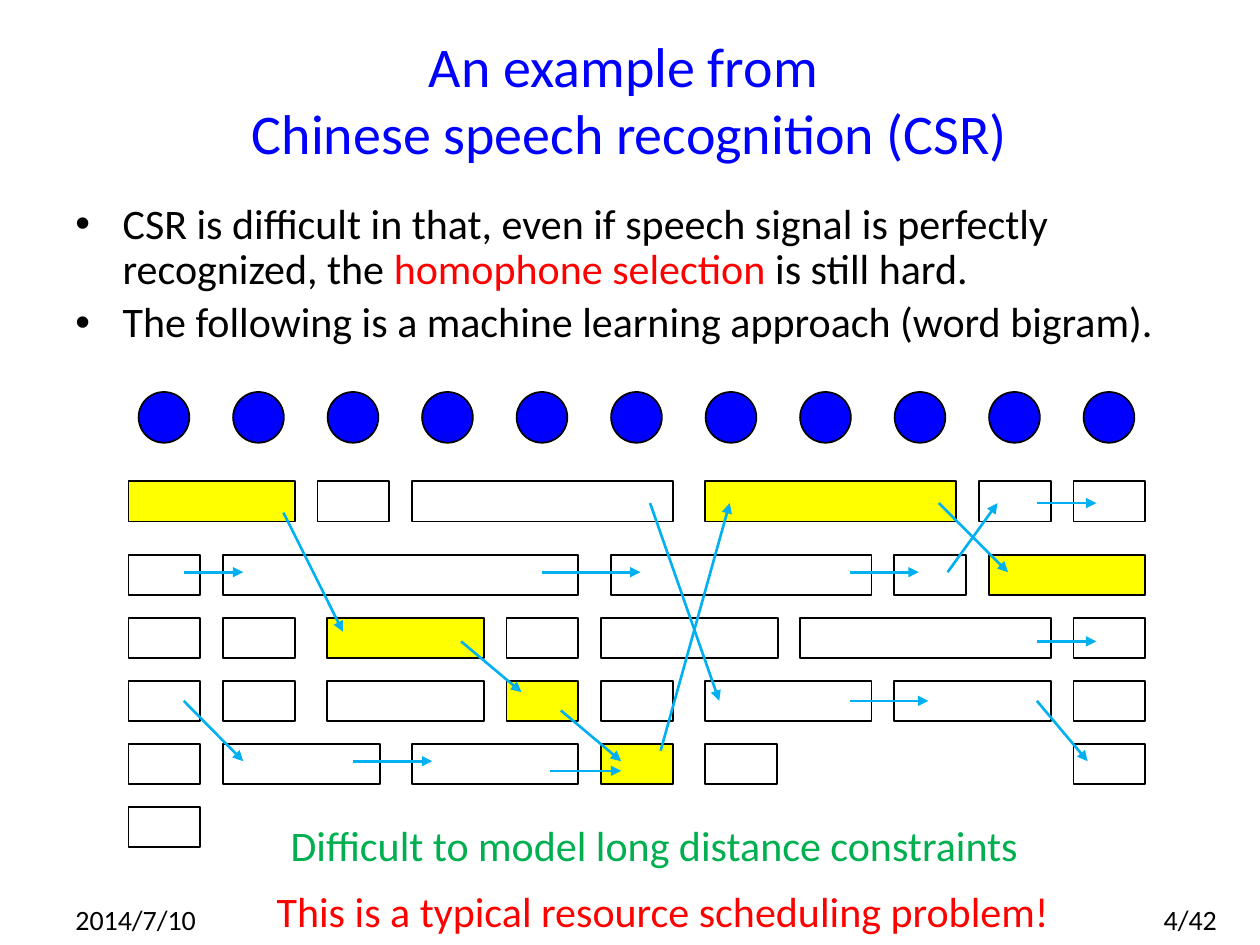
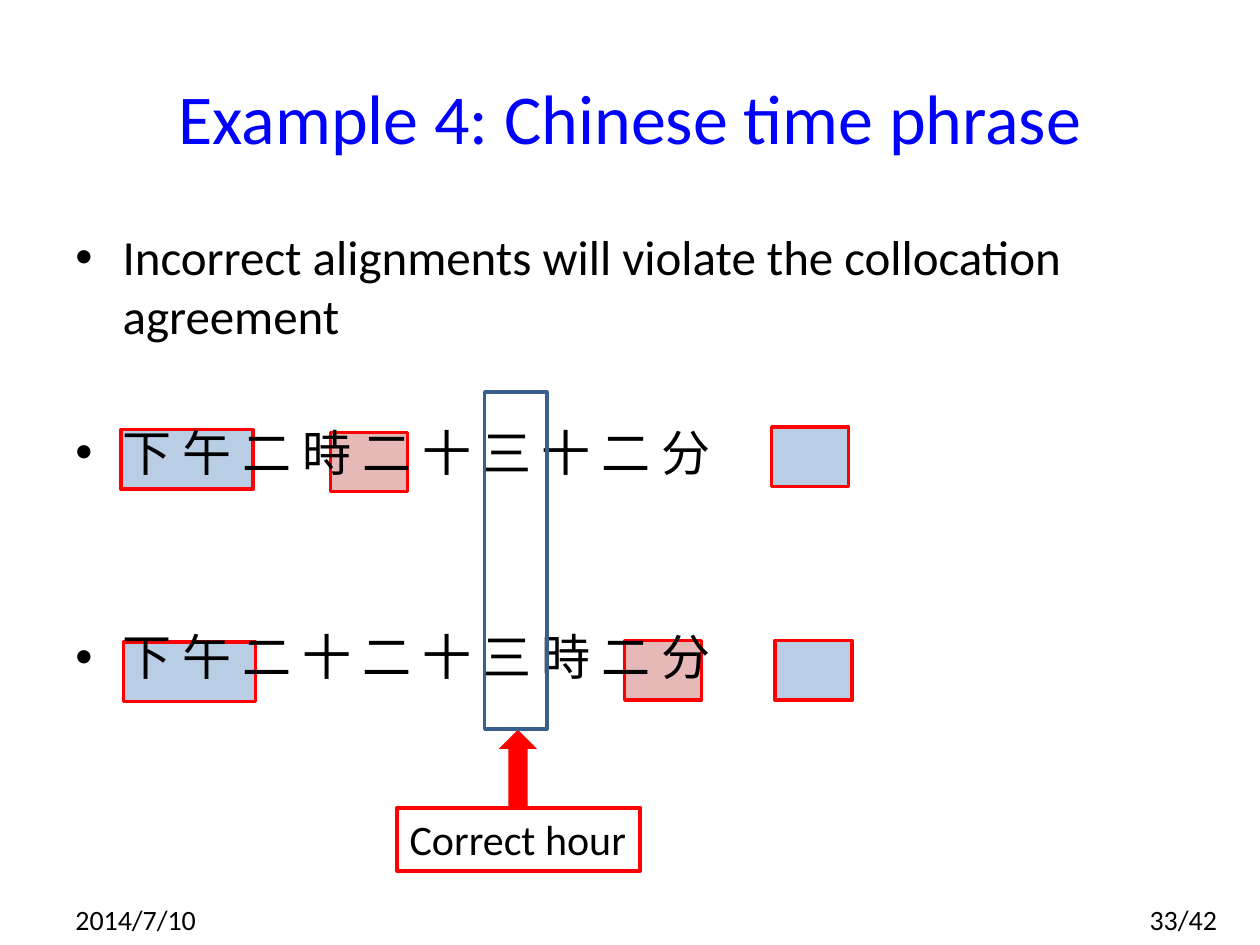
from lxml.etree import SubElement
from pptx import Presentation
from pptx.dml.color import RGBColor
from pptx.enum.shapes import MSO_CONNECTOR, MSO_SHAPE
from pptx.enum.text import MSO_ANCHOR, PP_ALIGN
from pptx.oxml.ns import qn
from pptx.util import Pt

COLORS = {
    "black": "000000",
    "blue": "0000FF",
    "red": "FF0000",
    "green": "00B050",
    "sky": "00B0F0",
    "yellow": "FFFF00",
    "pink": "E6B9B8",
    "pale_blue": "B9CDE5",
    "steel": "3A5F8C",
}
LATIN_FONT = "Calibri"
CHINESE_FONT = "Noto Sans CJK SC"

SYLLABLE_COUNT = 11
SYLLABLE_PITCH = 54
WORD_HEIGHT = 23
WORD_ROWS = {
    275: [(73.5, 95), (181.5, 41), (235.5, 149), (403, 143.5), (559.5, 41), (613.5, 41)],
    317: [(73.5, 41), (127.5, 203), (349, 149), (511, 41), (565, 89.5)],
    353: [(73.5, 41), (127.5, 41), (187, 89.5), (289.5, 41), (343.5, 101),
          (457, 143.5), (613.5, 41)],
    389: [(73.5, 41), (127.5, 41), (187, 89.5), (289.5, 41), (343.5, 41),
          (403, 95), (511, 89.5), (613.5, 41)],
    425: [(73.5, 41), (127.5, 89.5), (235.5, 95), (343.5, 41), (403, 41), (613.5, 41)],
    461: [(73.5, 41)],
}
CHOSEN_WORDS = {(275, 73.5), (275, 403), (317, 565), (353, 187), (389, 289.5), (425, 343.5)}
BIGRAM_ARROWS = [
    (162, 293, 196, 361), (105, 400.5, 139, 435), (105, 327, 139, 327),
    (263.5, 366.5, 298, 395.5), (309.5, 327, 366, 327), (320.5, 406, 355, 435),
    (377.5, 429, 417, 287.5), (371.5, 287.5, 411, 400.5), (485.5, 327, 525, 327),
    (536.5, 287.5, 576, 327), (485.5, 400.5, 530.5, 400.5), (592.5, 366.5, 626.5, 366.5),
    (592.5, 287.5, 626.5, 287.5), (592.5, 400.5, 621.5, 435), (201.5, 435, 247, 435),
    (314.5, 440.5, 355, 440.5), (541.5, 327, 570, 287.5),
]
TIME_MARKS = [
    (189, 247, 44, "pink"), (357, 366, 44, "pink"),
    (441, 244, 44, "pale_blue"), (69, 245.5, 75.5, "pale_blue"),
    (443, 366, 44, "pale_blue"), (70.5, 367, 75.5, "pale_blue"),
]


def rgb(name):
    """Return the named colour."""
    return RGBColor.from_string(COLORS[name])


def add_bullet(paragraph):
    """Give a paragraph a hanging bullet."""
    properties = paragraph._p.get_or_add_pPr()
    properties.set("marL", str(Pt(27)))
    properties.set("indent", str(-Pt(27)))
    SubElement(properties, qn("a:buFont"), typeface="Arial")
    SubElement(properties, qn("a:buChar"), char="•")


def write_text(paragraph, text, size=24, color="black", align=PP_ALIGN.LEFT,
               before=0, line_spacing=None, bullet=False, chinese=False):
    """Append formatted text to a paragraph, breaking lines at newlines."""
    paragraph.alignment = align
    paragraph.space_before = Pt(before)
    if line_spacing:
        paragraph.line_spacing = line_spacing
    for index, line in enumerate(text.split("\n")):
        if index:
            paragraph.add_line_break()
        run = paragraph.add_run()
        run.text = line
        run.font.size = Pt(size)
        run.font.name = CHINESE_FONT if chinese else LATIN_FONT
        run.font.color.rgb = rgb(color)
        if chinese:
            SubElement(run._r.get_or_add_rPr(), qn("a:ea"), typeface=CHINESE_FONT)
    if bullet:
        add_bullet(paragraph)


def add_frame(slide, left, top, width, height, anchor=MSO_ANCHOR.TOP, wrap=True):
    """Add a text box and return its text frame."""
    box = slide.shapes.add_textbox(Pt(left), Pt(top), Pt(width), Pt(height))
    frame = box.text_frame
    frame.word_wrap = wrap
    frame.vertical_anchor = anchor
    return frame


def add_label(slide, text, left, top, width, height, anchor=MSO_ANCHOR.TOP, wrap=True, **style):
    """Add a text box with one formatted paragraph."""
    frame = add_frame(slide, left, top, width, height, anchor, wrap)
    write_text(frame.paragraphs[0], text, **style)


def add_block(slide, kind, left, top, width, height, fill=None, line="black", weight=1):
    """Add a preset shape with an optional fill and outline."""
    shape = slide.shapes.add_shape(kind, Pt(left), Pt(top), Pt(width), Pt(height))
    shape.shadow.inherit = False
    if fill:
        shape.fill.solid()
        shape.fill.fore_color.rgb = rgb(fill)
    else:
        shape.fill.background()
    if line:
        shape.line.color.rgb = rgb(line)
        shape.line.width = Pt(weight)
    else:
        shape.line.fill.background()
    return shape


def add_arrow(slide, *ends):
    """Add a straight arrow between two points."""
    connector = slide.shapes.add_connector(MSO_CONNECTOR.STRAIGHT, *map(Pt, ends))
    connector.line.color.rgb = rgb("sky")
    connector.line.width = Pt(1.5)
    SubElement(connector.line._get_or_add_ln(), qn("a:tailEnd"), type="triangle")
    SubElement(connector._element.spPr, qn("a:effectLst"))


def add_title(slide, text, top, size):
    """Add the centred blue title."""
    add_label(slide, text, 36, top, 648, 90, anchor=MSO_ANCHOR.MIDDLE,
              size=size, color="blue", align=PP_ALIGN.CENTER)


def add_footer(slide, page):
    """Add the date and the page count."""
    add_label(slide, "2014/7/10", 36, 511, 168, 29, anchor=MSO_ANCHOR.MIDDLE, size=16)
    add_label(slide, page, 624, 511, 78.5, 29, anchor=MSO_ANCHOR.MIDDLE,
              size=16, align=PP_ALIGN.RIGHT)


def add_lattice(slide):
    """Draw the syllables, the candidate words and the bigram arrows."""
    for index in range(SYLLABLE_COUNT):
        add_block(slide, MSO_SHAPE.OVAL, 79.2 + index * SYLLABLE_PITCH, 224, 29, 29, "blue")
    for top, words in WORD_ROWS.items():
        for left, width in words:
            fill = "yellow" if (top, left) in CHOSEN_WORDS else None
            add_block(slide, MSO_SHAPE.RECTANGLE, left, top, width, WORD_HEIGHT, fill)
    for ends in BIGRAM_ARROWS:
        add_arrow(slide, *ends)


def build_recognition_slide(slide):
    """Build the speech recognition example."""
    add_title(slide, "An example from \nChinese speech recognition (CSR)", 11.5, 32)
    frame = add_frame(slide, 36, 112.5, 648, 101.5)
    style = {"before": 4.5, "line_spacing": 0.9}
    first = frame.paragraphs[0]
    write_text(first, "CSR is difficult in that, even if speech signal is perfectly "
               "recognized, the ", bullet=True, **style)
    write_text(first, "homophone selection ", color="red", **style)
    write_text(first, "is still hard.", **style)
    write_text(frame.add_paragraph(),
               "The following is a machine learning approach (word bigram).",
               bullet=True, **style)
    add_lattice(slide)
    add_label(slide, "Difficult to model long distance constraints",
              159, 464.5, 434, 36, wrap=False, color="green")
    add_footer(slide, "4/42")
    add_label(slide, "This is a typical resource scheduling problem!",
              151, 502.5, 460, 36, wrap=False, color="red")


def build_time_slide(slide):
    """Build the time phrase example."""
    for left, top, width, fill in TIME_MARKS:
        add_block(slide, MSO_SHAPE.RECTANGLE, left, top, width, 34, fill, "red", 2)
    add_title(slide, "Example 4: Chinese time phrase", 21.5, 40)
    frame = add_frame(slide, 36, 126, 648, 290)
    write_text(frame.paragraphs[0],
               "Incorrect alignments will violate the collocation agreement",
               size=28, before=5, bullet=True)
    for phrase, before in (("下 午 二 時 二 十 三 十 二 分", 44), ("下 午 二 十 二 十 三 時 二 分", 83)):
        write_text(frame.add_paragraph(), phrase, size=28, before=before,
                   line_spacing=Pt(34), bullet=True, chinese=True)
    add_block(slide, MSO_SHAPE.UP_ARROW, 285, 417, 22, 44, "red", None)
    caption = add_block(slide, MSO_SHAPE.RECTANGLE, 227, 461.5, 139, 36, None, "red", 2.25)
    caption.text_frame.word_wrap = False
    caption.text_frame.vertical_anchor = MSO_ANCHOR.TOP
    write_text(caption.text_frame.paragraphs[0], "Correct hour")
    add_block(slide, MSO_SHAPE.RECTANGLE, 277, 224, 35.5, 192.5, None, "steel", 2)
    add_footer(slide, "33/42")


def main():
    """Build and save the presentation."""
    presentation = Presentation()
    presentation.slide_width, presentation.slide_height = Pt(720), Pt(540)
    for build in (build_recognition_slide, build_time_slide):
        build(presentation.slides.add_slide(presentation.slide_layouts[6]))
    presentation.save("out.pptx")


if __name__ == "__main__":
    main()
